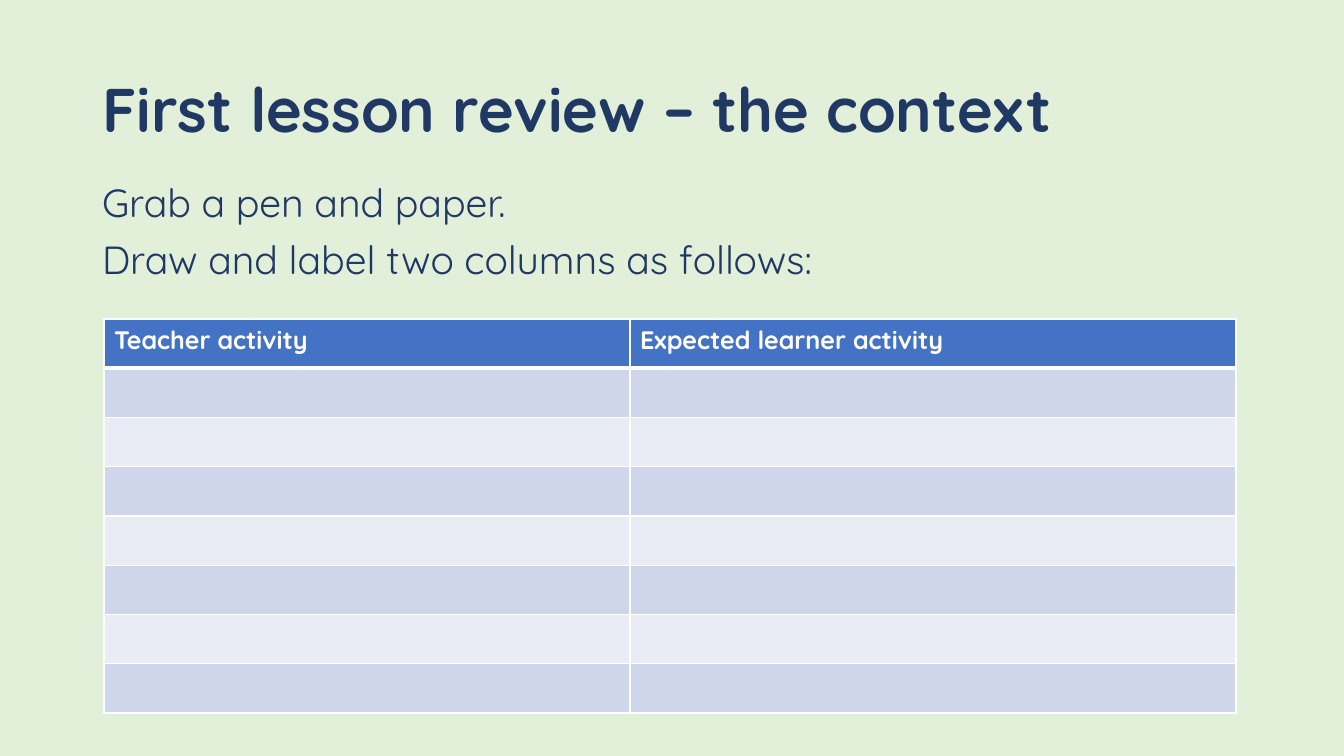
from dataclasses import dataclass

from lxml.etree import SubElement
from pptx import Presentation
from pptx.dml.color import RGBColor
from pptx.enum.text import MSO_ANCHOR, MSO_AUTO_SIZE, PP_ALIGN
from pptx.oxml import parse_xml
from pptx.oxml.ns import nsdecls, qn
from pptx.util import Emu, Pt

EMU_PER_PX = 914400 / 100.8


def px(length):
    return Emu(round(length * EMU_PER_PX))


@dataclass(frozen=True)
class Theme:
    typeface: str = "Quicksand"
    background: str = "E2F0D9"
    ink: str = "203864"
    header_fill: str = "4472C4"
    header_ink: str = "FFFFFF"
    bands: tuple = ("CFD5EA", "E9EBF5")
    border: str = "FFFFFF"
    title_size: int = 44
    body_size: int = 28
    table_size: int = 18
    border_width: int = 1
    header_rule_width: int = 3


class LessonSlide:
    def __init__(self, presentation, theme):
        self.theme = theme
        self.slide = presentation.slides.add_slide(presentation.slide_layouts[1])
        fill = self.slide.background.fill
        fill.solid()
        fill.fore_color.rgb = RGBColor.from_string(theme.background)

    def style(self, paragraph, size, color, bold=False):
        font = paragraph.font
        font.name = self.theme.typeface
        font.size = Pt(size)
        font.bold = bold
        font.color.rgb = RGBColor.from_string(color)

    def fill_placeholder(self, placeholder, box, lines, size, anchor, bold=False, before=0):
        placeholder.left, placeholder.top, placeholder.width, placeholder.height = map(px, box)
        frame = placeholder.text_frame
        frame.text = "\n".join(lines)
        frame.auto_size = MSO_AUTO_SIZE.NONE
        frame.vertical_anchor = anchor
        for paragraph in frame.paragraphs:
            paragraph.alignment = PP_ALIGN.LEFT
            paragraph.line_spacing = 0.9
            paragraph.space_before = Pt(before)
            self.style(paragraph, size, self.theme.ink, bold)
        return frame

    def title(self, box, heading):
        self.fill_placeholder(self.slide.shapes.title, box, [heading],
                              self.theme.title_size, MSO_ANCHOR.MIDDLE, bold=True)

    def body(self, box, lines):
        frame = self.fill_placeholder(self.slide.placeholders[1], box, lines,
                                      self.theme.body_size, MSO_ANCHOR.TOP, before=10)
        for paragraph in frame.paragraphs:
            properties = paragraph._p.get_or_add_pPr()
            properties.set("marL", "0")
            properties.set("indent", "0")
            bullet = SubElement(properties, qn("a:buNone"))
            properties.find(qn("a:defRPr")).addprevious(bullet)

    def set_borders(self, cell, bottom_width, top_width):
        properties = cell._tc.get_or_add_tcPr()
        side = self.theme.border_width
        widths = {"lnL": side, "lnR": side, "lnT": top_width, "lnB": bottom_width}
        for position, (edge, width) in enumerate(widths.items()):
            properties.insert(position, parse_xml(
                f'<a:{edge} {nsdecls("a")} w="{Pt(width)}"><a:solidFill>'
                f'<a:srgbClr val="{self.theme.border}"/></a:solidFill></a:{edge}>'))

    def table(self, left, top, column_widths, height, headings, blank_rows):
        theme = self.theme
        row_count = blank_rows + 1
        grid = self.slide.shapes.add_table(
            row_count, len(headings), px(left), px(top),
            px(sum(column_widths)), px(height)).table
        for column, width in zip(grid.columns, column_widths):
            column.width = px(width)
        for index, row in enumerate(grid.rows):
            row.height = px(height / row_count)
            fill = theme.bands[(index - 1) % 2] if index else theme.header_fill
            bottom = theme.border_width if index else theme.header_rule_width
            top_rule = theme.header_rule_width if index == 1 else theme.border_width
            for cell, heading in zip(row.cells, headings):
                cell.fill.solid()
                cell.fill.fore_color.rgb = RGBColor.from_string(fill)
                self.set_borders(cell, bottom, top_rule)
                if index == 0:
                    cell.text = heading
                    self.style(cell.text_frame.paragraphs[0], theme.table_size,
                               theme.header_ink, bold=True)


def main():
    presentation = Presentation()
    presentation.slide_width, presentation.slide_height = px(1344), px(756)
    lesson = LessonSlide(presentation, Theme())
    lesson.title((92, 40, 1159, 146), "First lesson review – the context")
    lesson.body((92, 179, 1159, 199),
                ["Grab a pen and paper.", "Draw and label two columns as follows:"])
    lesson.table(left=104, top=319, column_widths=(526, 606), height=394,
                 headings=("Teacher activity", "Expected learner activity"), blank_rows=7)
    presentation.save("out.pptx")


if __name__ == "__main__":
    main()
